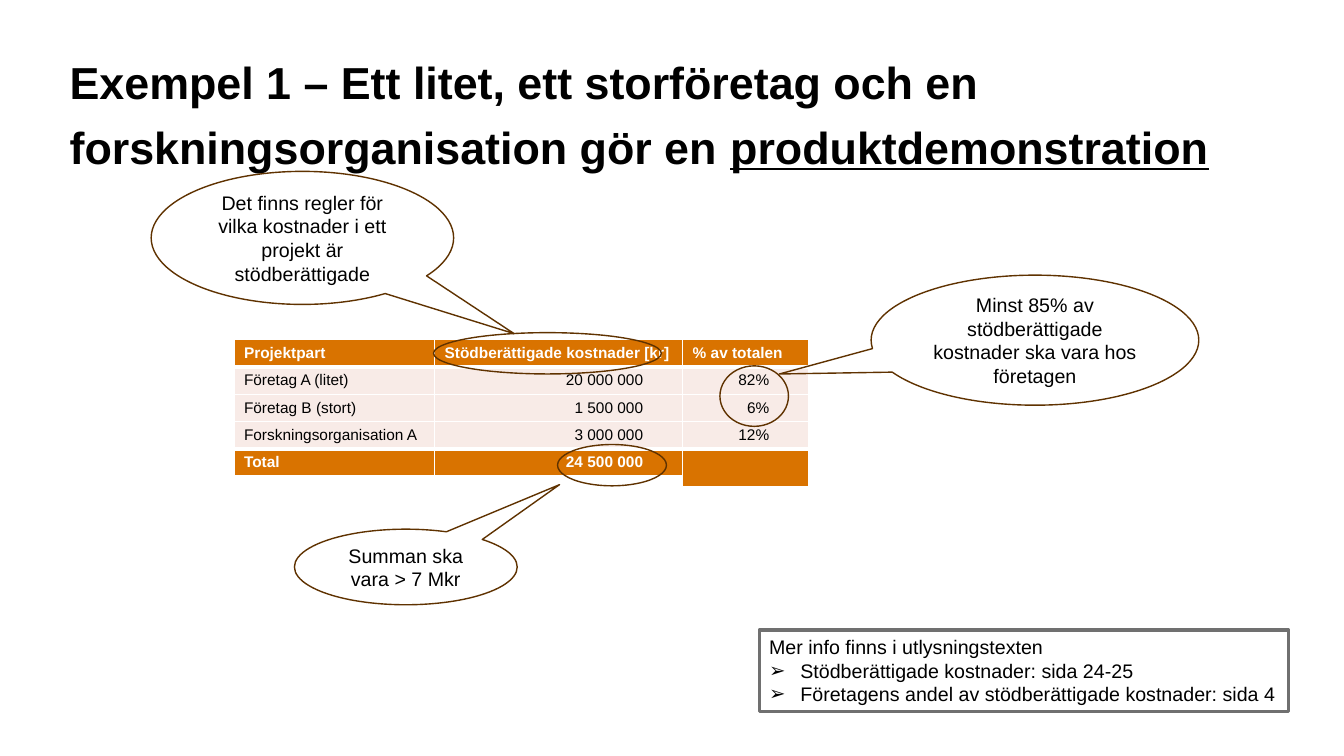
from lxml.etree import SubElement
from pptx import Presentation
from pptx.dml.color import RGBColor
from pptx.enum.shapes import MSO_SHAPE
from pptx.enum.text import MSO_ANCHOR, MSO_AUTO_SIZE, PP_ALIGN
from pptx.oxml.ns import qn
from pptx.util import Inches, Pt

GRID = 0.1  # inches per grid column and row
BLACK, WHITE = "000000", "FFFFFF"
ORANGE, PINK, BROWN, GREY = "D97300", "F8EBE7", "5F3200", "707070"


def area(*cells):
    """Turn grid columns and rows into slide lengths."""
    return [Inches(GRID * cell) for cell in cells]


def write(frame, text, size=14, color=BLACK, bold=False, align=PP_ALIGN.LEFT,
          anchor=MSO_ANCHOR.MIDDLE, spacing=None, underlined="", bullet=None):
    """Fill a frame line by line; bullets start at the second line."""
    frame.vertical_anchor = anchor
    for number, line in enumerate(text.split("\n")):
        paragraph = frame.add_paragraph() if number else frame.paragraphs[0]
        paragraph.alignment = align
        if spacing:
            paragraph.line_spacing = Pt(spacing)
        if bullet and number:
            properties = paragraph._p.get_or_add_pPr()
            indent = Inches(0.31)
            properties.set("marL", str(indent))
            properties.set("indent", str(-indent))
            SubElement(properties, qn("a:buFont"), typeface="Wingdings" if bullet == "Ø" else "Arial")
            SubElement(properties, qn("a:buChar"), char=bullet)
        for part in (line, underlined) if underlined else (line,):
            run = paragraph.add_run()
            run.text = part
            run.font.name, run.font.size, run.font.bold = "Arial", Pt(size), bold
            run.font.color.rgb = RGBColor.from_string(color)
            if part == underlined and underlined:
                run.font.underline = True


deck = Presentation()
deck.slide_width, deck.slide_height = Inches(13.33), Inches(7.5)
slide = deck.slides.add_slide(deck.slide_layouts[6])

# Cost tables, one per column, side by side
ROW = 2.7
left = 23.2
cost_columns = [
    (19.9, False, ["Projektpart", "Företag A (litet)", "Företag B (stort)",
                   "Forskningsorganisation A", "Total"]),
    (24.6, True, ["Stödberättigade kostnader [kr]", "20 000 000", "1 500 000",
                  "3 000 000", "24 500 000"]),
    (12.5, True, ["% av totalen", "82%", "6%", "12%", ""]),
]
for width, numeric, entries in cost_columns:
    last = len(entries) - 1
    costs = slide.shapes.add_table(
        len(entries), 1, *area(left, 33.7, width, ROW * len(entries))).table
    left += width
    for row, entry in enumerate(entries):
        costs.rows[row].height = Inches(GRID * ROW)
        cell = costs.cell(row, 0)
        strong = row in (0, last)
        is_number = numeric and row > 0
        cell.margin_right = Inches(0.39 if is_number else 0.1)
        for side in "LRTB":
            thick = (side == "B" and row in (0, last - 1)) or (side == "T" and row in (1, last))
            border = SubElement(cell._tc.get_or_add_tcPr(), qn(f"a:ln{side}"),
                                w=str(Pt(3 if thick else 1)))
            SubElement(SubElement(border, qn("a:solidFill")), qn("a:srgbClr"), val=WHITE)
        cell.fill.solid()
        cell.fill.fore_color.rgb = RGBColor.from_string(ORANGE if strong else PINK)
        write(cell.text_frame, entry, size=11, color=WHITE if strong else BLACK, bold=strong,
              align=PP_ALIGN.RIGHT if is_number else PP_ALIGN.LEFT)
        cell.vertical_anchor = MSO_ANCHOR.BOTTOM

# Title
title = slide.shapes.add_textbox(*area(6.9, 4.4, 120.9, 13.2)).text_frame
title.word_wrap = True
title.margin_left = title.margin_right = title.margin_top = title.margin_bottom = 0
write(title, "Exempel 1 – Ett litet, ett storföretag och en forskningsorganisation gör en ",
      size=32, bold=True, anchor=MSO_ANCHOR.TOP, spacing=46, underlined="produktdemonstration")

# Rings around table values, and the callouts that explain them
remarks = [
    ((71.4, 36.3, 6.8, 6), None, ""),
    ((86.4, 27.3, 32.5, 12.9), (-0.78, 0.26),
     "Minst 85% av stödberättigade kostnader ska vara hos företagen"),
    ((55.3, 44.1, 10.8, 4.1), None, ""),
    ((29.2, 52.5, 22.1, 7.5), (0.69, -1.09), "Summan ska vara > 7 Mkr"),
    ((43, 33, 22.6, 4.1), None, ""),
    ((15, 17, 30, 13.2), (0.7, 0.72),
     "Det finns regler för vilka kostnader i ett projekt är stödberättigade"),
]
for cells, tip, remark in remarks:
    kind = MSO_SHAPE.OVAL_CALLOUT if tip else MSO_SHAPE.OVAL
    bubble = slide.shapes.add_shape(kind, *area(*cells))
    bubble.shadow.inherit = False
    bubble.fill.background()
    bubble.line.color.rgb = RGBColor.from_string(BROWN)
    bubble.line.width = Pt(1)
    if tip:
        bubble.adjustments[0], bubble.adjustments[1] = tip
        bubble.text_frame.word_wrap = True
        write(bubble.text_frame, remark, align=PP_ALIGN.CENTER)

# Pointer to the call text
more_info = slide.shapes.add_textbox(*area(75.3, 62.5, 52.5, 8.1))
more_info.line.color.rgb = RGBColor.from_string(GREY)
more_info.line.width = Pt(2.25)
more_info.text_frame.word_wrap = False
more_info.text_frame.auto_size = MSO_AUTO_SIZE.SHAPE_TO_FIT_TEXT
write(more_info.text_frame, "Mer info finns i utlysningstexten\n"
      "Stödberättigade kostnader: sida 24-25\n"
      "Företagens andel av stödberättigade kostnader: sida 4",
      anchor=MSO_ANCHOR.TOP, bullet="➢")

deck.save("out.pptx")
